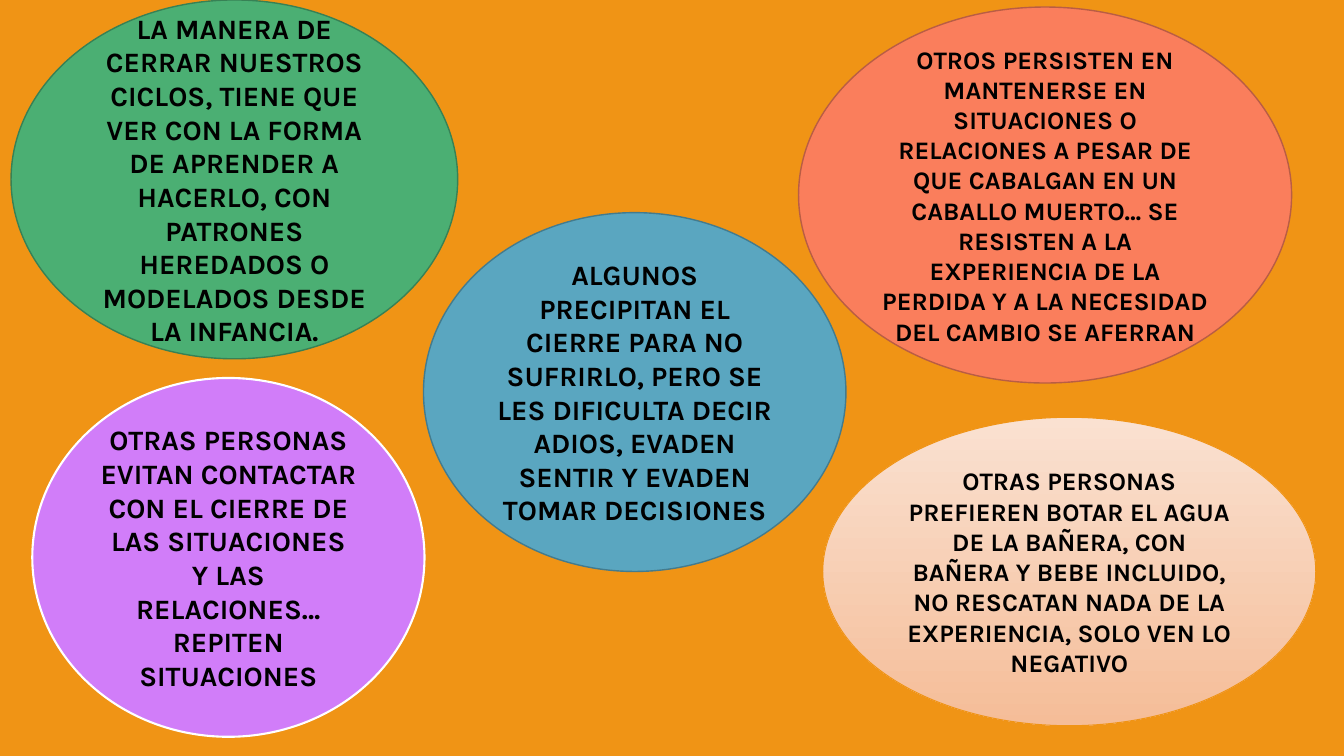
from dataclasses import dataclass

from pptx import Presentation
from pptx.dml.color import RGBColor
from pptx.enum.shapes import MSO_SHAPE
from pptx.enum.text import MSO_ANCHOR, PP_ALIGN
from pptx.util import Inches, Pt


@dataclass(frozen=True)
class Theme:
    font: str = "Karla"
    large: int = 20
    small: int = 18
    text: str = "000000"
    background: str = "F09415"
    green: tuple = ("4BAF73",)
    green_line: str = "378155"
    blue: tuple = ("5AA6C0",)
    blue_line: str = "437B8E"
    violet: tuple = ("D17DF9",)
    violet_line: str = "FFFFFF"
    coral: tuple = ("FA7E5C",)
    coral_line: str = "B95D44"
    peach: tuple = ("FAE1D1", "F5BD98")


THEME = Theme()

# box, fill colours, line colour, line width, text size, paragraphs
BUBBLES = [
    ((0.11, 0, 4.43, 3.56), THEME.green, THEME.green_line, 1, THEME.large,
     ["LA MANERA DE CERRAR NUESTROS CICLOS, TIENE QUE VER CON LA FORMA DE "
      "APRENDER A HACERLO, CON PATRONES HEREDADOS O MODELADOS DESDE LA INFANCIA."]),
    ((4.2, 2.11, 4.19, 3.56), THEME.blue, THEME.blue_line, 1, THEME.large,
     ["ALGUNOS PRECIPITAN EL CIERRE PARA NO SUFRIRLO, PERO SE LES DIFICULTA "
      "DECIR ADIOS, EVADEN SENTIR Y EVADEN TOMAR DECISIONES"]),
    ((0.32, 3.75, 3.89, 3.56), THEME.violet, THEME.violet_line, 1.5, THEME.large,
     ["OTRAS PERSONAS EVITAN CONTACTAR CON EL CIERRE DE LAS SITUACIONES Y LAS "
      "RELACIONES…",
      "REPITEN SITUACIONES"]),
    ((7.92, 0.07, 4.89, 3.73), THEME.coral, THEME.coral_line, 1, THEME.small,
     ["OTROS PERSISTEN EN MANTENERSE EN SITUACIONES O RELACIONES A PESAR DE QUE "
      "CABALGAN EN UN CABALLO MUERTO… SE RESISTEN A LA EXPERIENCIA DE LA PERDIDA "
      "Y A LA NECESIDAD DEL CAMBIO SE AFERRAN"]),
    ((8.16, 4.14, 4.89, 3.06), THEME.peach, THEME.background, 0.75, THEME.small,
     ["OTRAS PERSONAS PREFIEREN BOTAR EL AGUA DE LA BAÑERA, CON BAÑERA Y BEBE "
      "INCLUIDO, NO RESCATAN NADA DE LA EXPERIENCIA, SOLO VEN LO NEGATIVO"]),
]


def rgb(color):
    return RGBColor.from_string(color)


def paint(fill, colors):
    """Fill with one colour, or with a gradient from top to bottom for two."""
    if len(colors) == 1:
        fill.solid()
        fill.fore_color.rgb = rgb(colors[0])
        return
    fill.gradient()
    fill.gradient_angle = 270
    for stop, position, color in zip(fill.gradient_stops, (0, 1), colors):
        stop.position = position
        stop.color.rgb = rgb(color)


def write_paragraphs(tf, paragraphs, size):
    tf.word_wrap = True
    tf.vertical_anchor = MSO_ANCHOR.MIDDLE
    font_format = {"name": THEME.font, "size": Pt(size), "bold": True}
    for i, text in enumerate(paragraphs):
        p = tf.add_paragraph() if i else tf.paragraphs[0]
        p.alignment = PP_ALIGN.CENTER
        r = p.add_run()
        r.text = text
        for name, value in font_format.items():
            setattr(r.font, name, value)
        r.font.color.rgb = rgb(THEME.text)


def add_bubble(s, box, colors, line_color, line_width, size, paragraphs):
    sp = s.shapes.add_shape(MSO_SHAPE.OVAL, *map(Inches, box))
    sp.shadow.inherit = False
    paint(sp.fill, colors)
    sp.line.color.rgb = rgb(line_color)
    sp.line.width = Pt(line_width)
    write_paragraphs(sp.text_frame, paragraphs, size)


def build_bubble_slide(prs):
    s = prs.slides.add_slide(prs.slide_layouts[6])
    paint(s.background.fill, (THEME.background,))
    for bubble in BUBBLES:
        add_bubble(s, *bubble)


def main():
    prs = Presentation()
    prs.slide_width, prs.slide_height = Inches(13.33), Inches(7.5)
    build_bubble_slide(prs)
    prs.save("out.pptx")


if __name__ == "__main__":
    main()
